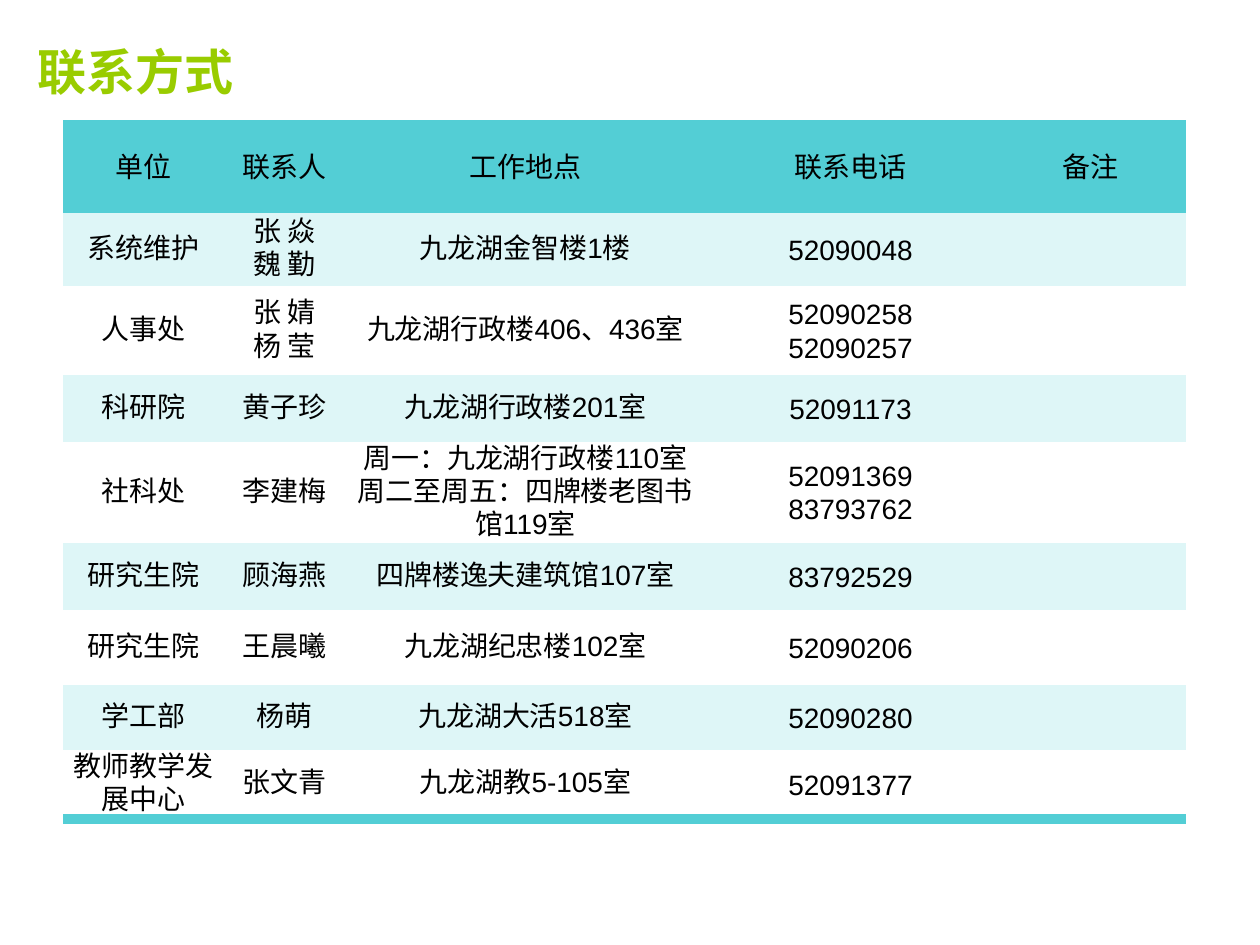
import dataclasses
import itertools

import lxml.etree
import pptx
import pptx.dml.color
import pptx.enum.text
import pptx.oxml.ns
import pptx.util

TEAL, PALE, WHITE, BLACK, LIME = "53CED5", "DEF6F7", "FFFFFF", "000000", "99CC00"
PLAIN_STYLE = "{2D5ABB26-0587-4C30-8999-92F81FD0307C}"
WIDTH, HEIGHT = 10, 7.5
COLUMNS = (1.28, 0.96, 2.86, 2.3, 1.51)
HEADINGS = ("单位", "联系人", "工作地点", "联系电话", "备注")


@dataclasses.dataclass
class Contact:
    unit: str
    people: str
    place: str
    phones: str
    height: float
    remark: str = ""

    def texts(self) -> tuple[str, ...]:
        return self.unit, self.people, self.place, self.phones, self.remark


CONTACTS = (
    Contact("系统维护", "张 焱\n魏 勤", "九龙湖金智楼1楼", "52090048", 0.58),
    Contact("人事处", "张 婧\n杨 莹", "九龙湖行政楼406、436室", "52090258\n52090257", 0.71),
    Contact("科研院", "黄子珍", "九龙湖行政楼201室", "52091173", 0.53),
    Contact("社科处", "李建梅", "周一：九龙湖行政楼110室\n周二至周五：四牌楼老图书馆119室",
            "52091369\n83793762", 0.8),
    Contact("研究生院", "顾海燕", "四牌楼逸夫建筑馆107室", "83792529", 0.53),
    Contact("研究生院", "王晨曦", "九龙湖纪忠楼102室", "52090206", 0.6),
    Contact("学工部", "杨萌", "九龙湖大活518室", "52090280", 0.51),
    Contact("教师教学发展中心", "张文青", "九龙湖教5-105室", "52091377", 0.55),
)
ROWS = (0.7, *(contact.height for contact in CONTACTS))


def color(value: str) -> pptx.dml.color.RGBColor:
    return pptx.dml.color.RGBColor.from_string(value)


def set_font(font, name: str, size: float, shade: str, bold: bool = False) -> None:
    font.name, font.size, font.bold = name, pptx.util.Pt(size), bold
    font.color.rgb = color(shade)


def add_border(cell, side: str, shade: str, points: float) -> None:
    qn = pptx.oxml.ns.qn
    line = lxml.etree.Element(qn(f"a:{side}"), w=str(pptx.util.Pt(points)))
    fill = lxml.etree.SubElement(line, qn("a:solidFill"))
    lxml.etree.SubElement(fill, qn("a:srgbClr"), val=shade)
    cell._tc.get_or_add_tcPr().insert(0, line)


def fill_cell(cell, text: str, shade: str) -> None:
    cell.fill.solid()
    cell.fill.fore_color.rgb = color(shade)
    cell.vertical_anchor = pptx.enum.text.MSO_ANCHOR.MIDDLE
    cell.margin_left = cell.margin_right = pptx.util.Inches(0.07)
    cell.margin_top = cell.margin_bottom = 0
    cell.text = text
    for paragraph in cell.text_frame.paragraphs:
        paragraph.alignment = pptx.enum.text.PP_ALIGN.CENTER
        paragraph.line_spacing = pptx.util.Pt(19)
        set_font(paragraph.font, "Arial", 16, BLACK)


def add_title(page, text: str) -> None:
    title = page.shapes.title
    title.left, title.top = pptx.util.Inches(0.02 * WIDTH), pptx.util.Inches(0.29)
    title.width, title.height = pptx.util.Inches(0.9 * WIDTH), pptx.util.Inches(0.54)
    title.text_frame.text = text
    title.text_frame.vertical_anchor = pptx.enum.text.MSO_ANCHOR.MIDDLE
    paragraph = title.text_frame.paragraphs[0]
    paragraph.alignment = pptx.enum.text.PP_ALIGN.LEFT
    set_font(paragraph.font, "Noto Sans CJK SC", 28, LIME, bold=True)


def add_contact_table(page) -> None:
    inches = pptx.util.Inches
    frame = page.shapes.add_table(
        len(ROWS), len(COLUMNS), inches(0.05 * WIDTH), inches(0.99),
        inches(sum(COLUMNS)), inches(sum(ROWS)))
    table = frame.table
    table.first_row = table.horz_banding = False
    table._tbl.tblPr.find(pptx.oxml.ns.qn("a:tableStyleId")).text = PLAIN_STYLE
    for column, width in zip(table.columns, COLUMNS):
        column.width = inches(width)
    for row, height in zip(table.rows, ROWS):
        row.height = inches(height)
    contents = (HEADINGS, *(contact.texts() for contact in CONTACTS))
    shades = itertools.chain([TEAL], itertools.cycle([PALE, WHITE]))
    for row, texts, shade in zip(table.rows, contents, shades):
        for cell, text in zip(row.cells, texts):
            fill_cell(cell, text, shade)
    for index, side in ((0, "lnT"), (len(ROWS) - 1, "lnB")):
        for cell in table.rows[index].cells:
            add_border(cell, side, TEAL, 6)


def main() -> None:
    deck = pptx.Presentation()
    deck.slide_width = pptx.util.Inches(WIDTH)
    deck.slide_height = pptx.util.Inches(HEIGHT)
    page = deck.slides.add_slide(deck.slide_layouts[5])
    add_title(page, "联系方式")
    add_contact_table(page)
    deck.save("out.pptx")


if __name__ == "__main__":
    main()
